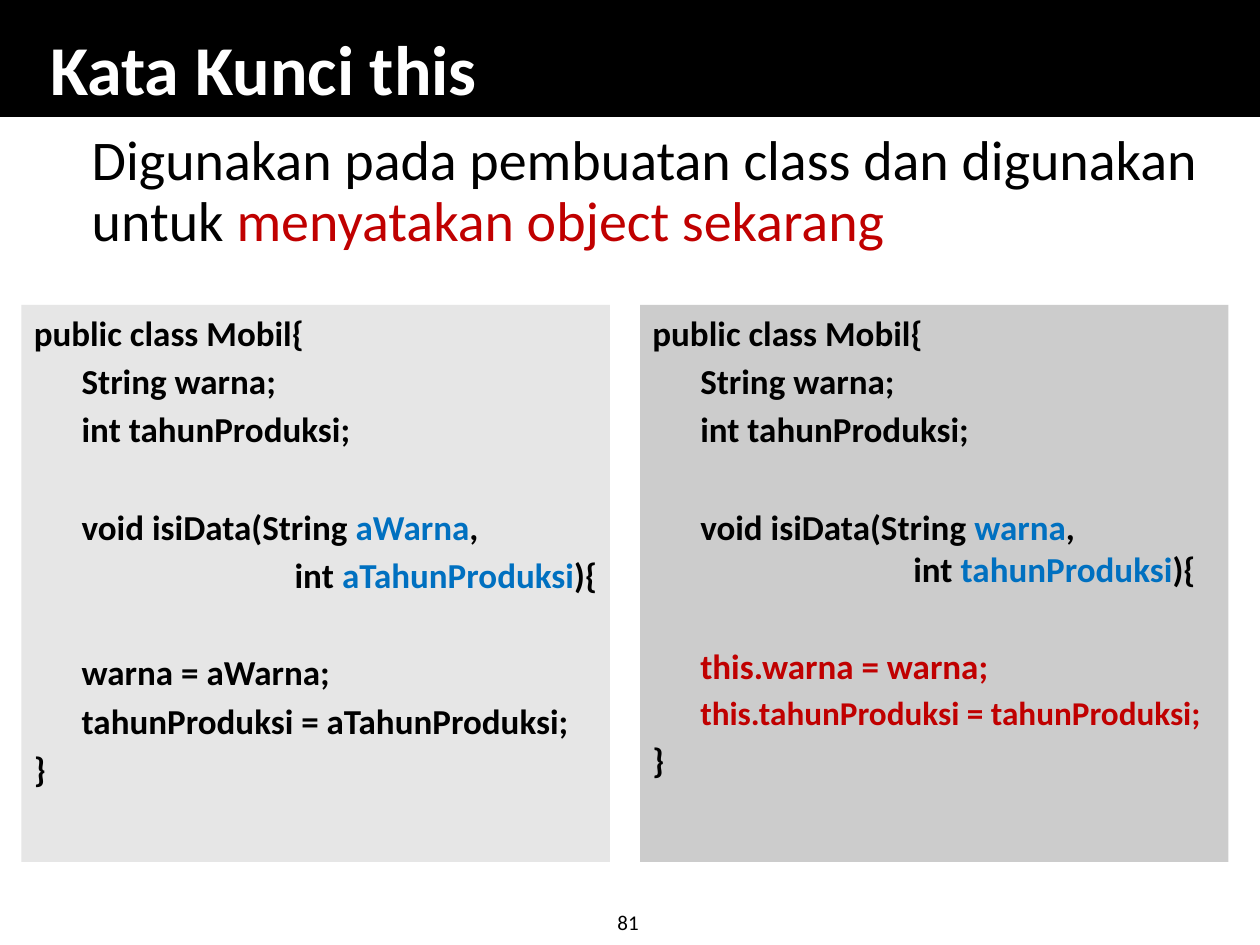
from pptx import Presentation
from pptx.dml.color import RGBColor
from pptx.enum.shapes import MSO_SHAPE
from pptx.enum.text import MSO_ANCHOR, PP_ALIGN
from pptx.util import Inches, Pt

BLACK, WHITE, RED, BLUE = "000000", "FFFFFF", "C00000", "0070C0"
LINE_GAP, BLANK_LINE_GAP = 3.6, 31.6
INDENT = 0.38


def color(value):
    return RGBColor.from_string(value)


def add_runs(paragraph, runs, size, bold=False):
    """Add (text, color) pairs to a paragraph as Calibri runs."""
    for text, run_color in runs:
        run = paragraph.add_run()
        run.text = text
        font_format = {"name": "Calibri", "size": Pt(size), "bold": bold}
        for attribute, value in font_format.items():
            setattr(run.font, attribute, value)
        run.font.color.rgb = color(run_color)


presentation = Presentation()
presentation.slide_width, presentation.slide_height = Inches(10), Inches(7.5)
slide = presentation.slides.add_slide(presentation.slide_layouts[6])

# Filled rectangles: title bar and the two code panels
rectangles = []
for left, top, width, height, fill in [
    (0, 0, 10, 0.92, BLACK),
    (0.17, 2.42, 4.67, 4.42, "E6E6E6"),
    (5.08, 2.42, 4.67, 4.42, "CCCCCC"),
]:
    shape = slide.shapes.add_shape(
        MSO_SHAPE.RECTANGLE, Inches(left), Inches(top), Inches(width), Inches(height)
    )
    shape.shadow.inherit = False
    shape.fill.solid()
    shape.fill.fore_color.rgb = color(fill)
    shape.line.fill.background()
    rectangles.append(shape)
title_bar, *code_panels = rectangles
title_bar.line.color.rgb = color(BLACK)
title_bar.line.width = Pt(1)

# Title, explanation and page number
explanation = [
    ("Digunakan pada pembuatan class dan digunakan untuk ", BLACK),
    ("menyatakan object sekarang", RED),
]
for box, runs, size, bold, anchor, wrap, paragraph_format in [
    ((0.3, 0.21, 9.36, 0.71), [("Kata Kunci this", WHITE)], 40, True,
     MSO_ANCHOR.BOTTOM, True, {}),
    ((0.25, 1, 9.5, 1.3), explanation, 32, False,
     MSO_ANCHOR.TOP, True, {"line_spacing": 0.9}),
    ((4.78, 7.17, 0.41, 0.3), [("81", BLACK)], 12, False,
     MSO_ANCHOR.TOP, False, {"alignment": PP_ALIGN.CENTER}),
]:
    text_box = slide.shapes.add_textbox(*[Inches(length) for length in box])
    text_frame = text_box.text_frame
    text_frame.word_wrap = wrap
    text_frame.vertical_anchor = anchor
    paragraph = text_frame.paragraphs[0]
    for attribute, value in paragraph_format.items():
        setattr(paragraph, attribute, value)
    if runs is explanation:
        paragraph._p.get_or_add_pPr().set("marL", str(Inches(INDENT)))
    add_runs(paragraph, runs, size, bold)

# Code lines: left margin, first-line indent, space before, size, runs
class_start = [
    (0, 0, 0, 20, [("public class Mobil{", BLACK)]),
    (INDENT, 0, LINE_GAP, 20, [("String warna;", BLACK)]),
    (INDENT, 0, LINE_GAP, 20, [("int tahunProduksi;", BLACK)]),
]
class_end = [(0, 0, LINE_GAP, 20, [("}", BLACK)])]
method_start = ("void isiData(String ", BLACK)
second_parameter = ("           int ", BLACK)

without_this = [
    (INDENT, 0, BLANK_LINE_GAP, 20, [method_start, ("aWarna", BLUE), (",", BLACK)]),
    (INDENT, 1, LINE_GAP, 20,
     [second_parameter, ("aTahunProduksi", BLUE), ("){", BLACK)]),
    (INDENT, 0, BLANK_LINE_GAP, 20, [("warna = aWarna;", BLACK)]),
    (INDENT, 0, LINE_GAP, 20, [("tahunProduksi = aTahunProduksi;", BLACK)]),
]
with_this = [
    (INDENT, 0, BLANK_LINE_GAP, 20, [method_start, ("warna", BLUE), (",", BLACK)]),
    (INDENT, 1, 0, 20, [second_parameter, ("tahunProduksi", BLUE), ("){", BLACK)]),
    (INDENT, 0, BLANK_LINE_GAP, 20, [("this.warna = warna;", RED)]),
    (INDENT, 0, LINE_GAP, 19, [("this.tahunProduksi = tahunProduksi;", RED)]),
]
for panel, method in zip(code_panels, [without_this, with_this]):
    text_frame = panel.text_frame
    text_frame.word_wrap = True
    text_frame.vertical_anchor = MSO_ANCHOR.TOP
    for number, code_line in enumerate(class_start + method + class_end):
        margin, first_indent, space_before, size, runs = code_line
        paragraph = text_frame.add_paragraph() if number else text_frame.paragraphs[0]
        paragraph.alignment = PP_ALIGN.LEFT
        paragraph.space_before = Pt(space_before)
        properties = paragraph._p.get_or_add_pPr()
        properties.set("marL", str(Inches(margin)))
        properties.set("indent", str(Inches(first_indent)))
        add_runs(paragraph, runs, size, bold=True)

presentation.save("out.pptx")
